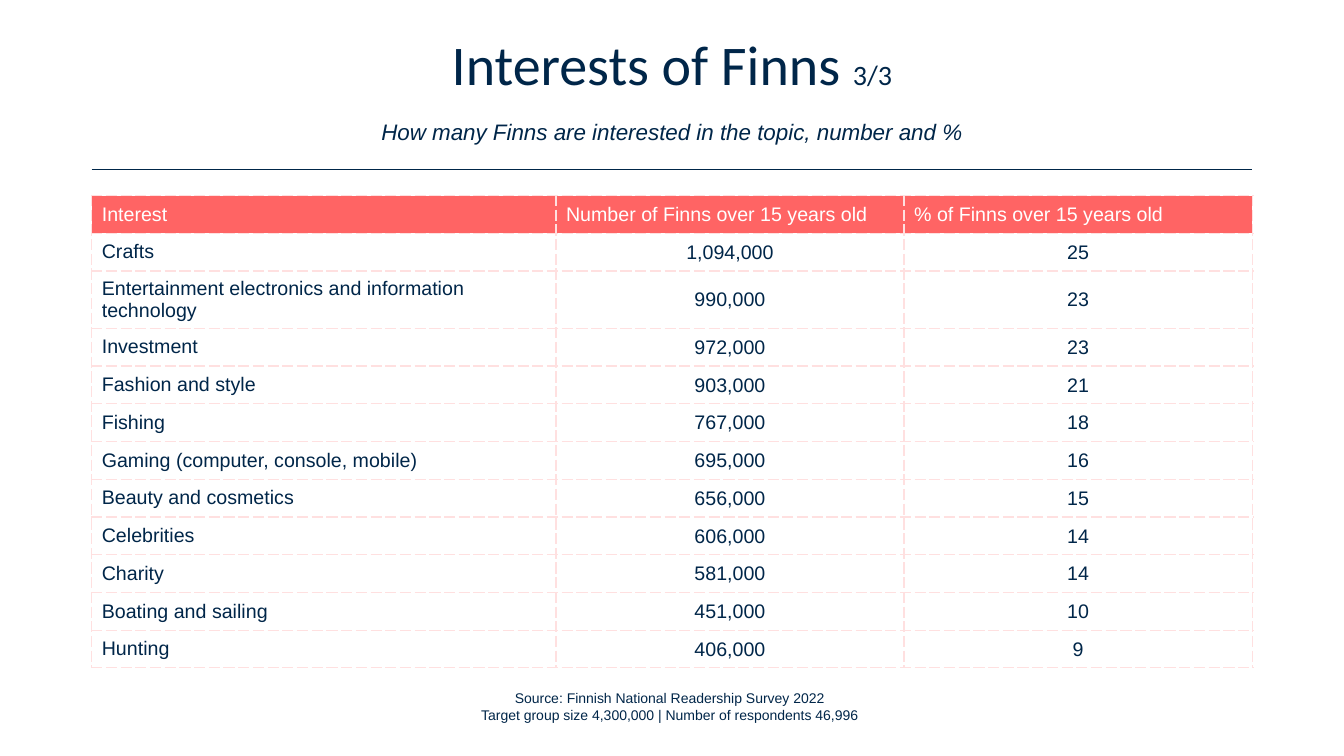
from lxml.etree import SubElement
from pptx import Presentation
from pptx.dml.color import RGBColor
from pptx.enum.shapes import MSO_CONNECTOR
from pptx.enum.text import MSO_ANCHOR, PP_ALIGN
from pptx.oxml import parse_xml
from pptx.oxml.ns import nsdecls, qn
from pptx.util import Inches, Pt

NAVY, CORAL, PINK, WHITE = "002649", "FF6464", "FFE0E0", "FFFFFF"
WIDE, HIGH = 13.33, 7.5
SPAN = 11.51
LEFT = (WIDE - SPAN) / 2


def style(run, size, color=NAVY, face="Arial", slant=None):
    font = run.font
    font.size, font.name, font.italic = Pt(size), face, slant
    font.color.rgb = RGBColor.from_string(color)


def text_box(left, top, width, height):
    box = slide.shapes.add_textbox(*map(Inches, (left, top, width, height)))
    frame = box.text_frame
    frame.word_wrap = True
    para = frame.paragraphs[0]
    para.alignment = PP_ALIGN.CENTER
    return frame, para


deck = Presentation()
deck.slide_width, deck.slide_height = Inches(WIDE), Inches(HIGH)
slide = deck.slides.add_slide(deck.slide_layouts[6])

# Title with page count and subtitle
frame, para = text_box(LEFT, 0.42, SPAN, 1.07)
frame.vertical_anchor = MSO_ANCHOR.MIDDLE
para.line_spacing, para.space_after = Pt(35), Pt(18)
for words, size, face, slant in [
    ("Interests of Finns ", 40, "Calibri", None),
    ("3/3", 20, "Calibri", None),
    ("How many Finns are interested in the topic, number and %", 16, "Arial", True),
]:
    if slant:
        para.add_line_break()
    run = para.add_run()
    run.text = words
    style(run, size, face=face, slant=slant)

# Rule under the title
rule = slide.shapes.add_connector(
    MSO_CONNECTOR.STRAIGHT,
    Inches(LEFT), Inches(1.68), Inches(LEFT + SPAN), Inches(1.68))
rule.line.color.rgb = RGBColor.from_string(NAVY)
rule.line.width = Pt(1)
SubElement(rule._element.spPr, qn("a:effectLst"))

# Table of interests
rows = [
    ("Interest", "Number of Finns over 15 years old", "% of Finns over 15 years old"),
    ("Crafts", "1,094,000", "25"),
    ("Entertainment electronics and information technology", "990,000", "23"),
    ("Investment", "972,000", "23"),
    ("Fashion and style", "903,000", "21"),
    ("Fishing", "767,000", "18"),
    ("Gaming (computer, console, mobile)", "695,000", "16"),
    ("Beauty and cosmetics", "656,000", "15"),
    ("Celebrities", "606,000", "14"),
    ("Charity", "581,000", "14"),
    ("Boating and sailing", "451,000", "10"),
    ("Hunting", "406,000", "9"),
]
TALL, TWO_LINE = 4.66, 0.54
ROW = (TALL - TWO_LINE) / (len(rows) - 1)
table = slide.shapes.add_table(
    len(rows), 3, Inches(LEFT), Inches(1.94), Inches(SPAN), Inches(TALL)).table
table.first_row = table.horz_banding = False
for col, share in zip(table.columns, (0.4, 0.3, 0.3)):
    col.width = Inches(SPAN * share)

for i, row in enumerate(rows):
    table.rows[i].height = Inches(TWO_LINE if i == 2 else ROW)
    for j, words in enumerate(row):
        cell = table.cell(i, j)
        cell.text = words
        cell.vertical_anchor = MSO_ANCHOR.MIDDLE
        para = cell.text_frame.paragraphs[0]
        style(para.runs[0], 14, NAVY if i else WHITE)
        if i and j:
            para.alignment = PP_ALIGN.CENTER
            cell.margin_left = cell.margin_right = cell.margin_top = Inches(0.01)
            cell.margin_bottom = 0

        # Dashed borders come before the fill
        props = cell._tc.get_or_add_tcPr()
        for side in "LRTB":
            props.append(parse_xml(
                f'<a:ln{side} {nsdecls("a")} w="{Pt(1)}"><a:solidFill>'
                f'<a:srgbClr val="{PINK}"/></a:solidFill>'
                f'<a:prstDash val="sysDash"/></a:ln{side}>'))
        if i:
            cell.fill.background()
        else:
            cell.fill.solid()
            cell.fill.fore_color.rgb = RGBColor.from_string(CORAL)

# Source note
frame, para = text_box(4.05, 6.79, 5.18, 0.44)
para.text = ("Source: Finnish National Readership Survey 2022\v"
             "Target group size 4,300,000 | Number of respondents 46,996")
for run in para.runs:
    style(run, 10)

deck.save("out.pptx")
